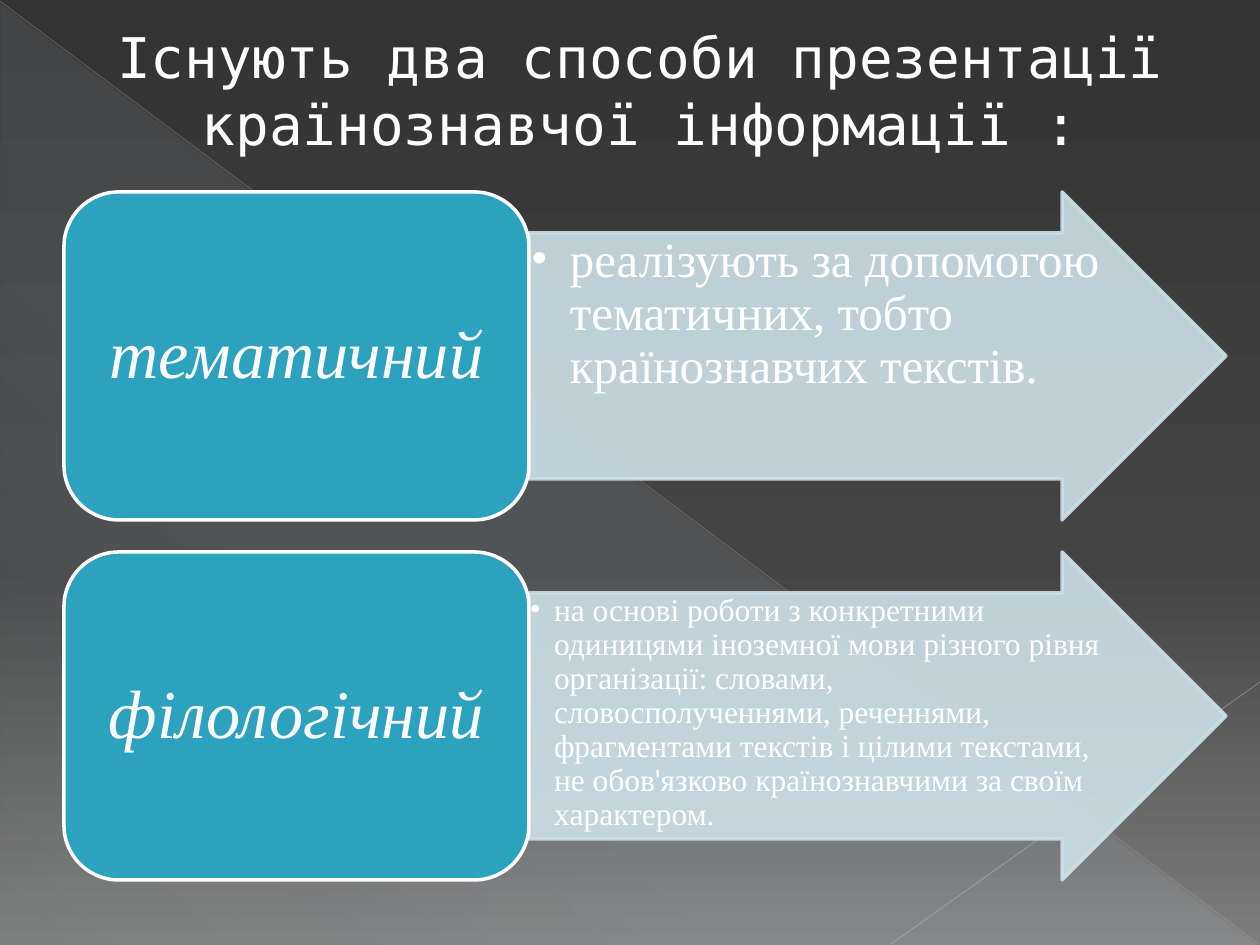
from dataclasses import dataclass

from lxml.etree import SubElement
from pptx import Presentation
from pptx.dml.color import RGBColor
from pptx.enum.shapes import MSO_CONNECTOR, MSO_SHAPE
from pptx.enum.text import MSO_ANCHOR as Anchor, MSO_AUTO_SIZE, PP_ALIGN as Align
from pptx.oxml.ns import qn
from pptx.util import Emu, Pt

PX_PER_INCH = 126
WHITE = RGBColor(0xFF, 0xFF, 0xFF)
TEAL = RGBColor(0x2D, 0xA2, 0xBF)
PALE_BLUE = RGBColor(0xCD, 0xE0, 0xE8)
ICE = RGBColor(0xDE, 0xF5, 0xFA)
GREY = RGBColor(0xB9, 0xB9, 0xB9)
LIGHT_GREY = RGBColor(0xC1, 0xC1, 0xC1)
DARK = RGBColor(0x33, 0x33, 0x33)
CHARCOAL = RGBColor(0x44, 0x44, 0x44)
MID_GREY = RGBColor(0x7D, 0x7D, 0x7D)

MONO = "DejaVu Sans Mono"
SERIF = "Times New Roman"

TITLE = "Існують два способи презентації країнознавчої інформації :"
ROW_TOP, ROW_PITCH, ROW_HEIGHT = 192, 360, 328
BOX_LEFT, BOX_WIDTH = 64, 465
ARROW_LEFT, ARROW_WIDTH = BOX_LEFT + BOX_WIDTH, 697
DETAIL_WIDTH = 575
SHAFT_INSET = ROW_HEIGHT // 8  # the shaft takes 3/4 of the arrow's height


@dataclass
class Method:
    name: str
    detail: str
    size: int
    indent: int
    inset: int


@dataclass
class Stop:
    position: int
    color: RGBColor
    opacity: int = 100


@dataclass
class Ray:
    start: tuple[int, int]
    end: tuple[int, int]
    color: RGBColor
    width: float
    opacity: int


METHODS = [
    Method("тематичний",
           "реалізують за допомогою тематичних, тобто країнознавчих текстів.",
           28, 39, 2),
    Method("філологічний",
           "на основі роботи з конкретними одиницями іноземної мови різного рівня "
           "організації: словами, словосполученнями, реченнями, фрагментами текстів "
           "і цілими текстами, не обов'язково країнознавчими за своїм xарактером.",
           18, 24, 1),
]
BACKDROP = [Stop(0, DARK), Stop(60, CHARCOAL), Stop(100, MID_GREY)]
SHEEN = [Stop(0, ICE, 10), Stop(70, ICE, 8), Stop(100, ICE, 1)]
RAYS = [
    Ray((0, 1), (1259, 944), GREY, 0.39, 35),
    Ray((1260, 682), (891, 944), LIGHT_GREY, 0.47, 45),
]


def px(n: int) -> Emu:
    return Emu(round(n * 914400 / PX_PER_INCH))


def set_gradient(owner, fill, stops: list[Stop], angle: int) -> None:
    """Fill with the stops along a clockwise angle; owner holds the fill's XML."""
    fill.gradient()
    fill.gradient_angle = 360 - angle
    stop_list = next(owner.element.iter(qn("a:gsLst")))
    for old in list(stop_list):
        stop_list.remove(old)
    for stop in stops:
        gs = SubElement(stop_list, qn("a:gs"), pos=str(stop.position * 1000))
        color = SubElement(gs, qn("a:srgbClr"), val=str(stop.color))
        if stop.opacity < 100:
            SubElement(color, qn("a:alpha"), val=str(stop.opacity * 1000))


def set_opacity(sp, percent: int) -> None:
    """Make both the fill and the line of a shape partly transparent."""
    for color in sp.element.spPr.iter(qn("a:srgbClr")):
        SubElement(color, qn("a:alpha"), val=str(percent * 1000))


def write(sp, text: str, *, font: str, size: int, italic: bool = False,
          align=Align.CENTER, anchor=Anchor.MIDDLE, spacing: float = 1,
          insets: tuple[int, int, int, int] = (13, 6, 13, 6)):
    """Put one paragraph in a shape; insets are left, top, right, bottom."""
    tf = sp.text_frame
    tf.word_wrap = True
    tf.vertical_anchor = anchor
    (tf.margin_left, tf.margin_top,
     tf.margin_right, tf.margin_bottom) = map(px, insets)
    p = tf.paragraphs[0]
    p.alignment = align
    p.line_spacing = spacing
    r = p.add_run()
    r.text = text
    r.font.name = font
    r.font.size = Pt(size)
    r.font.italic = italic
    r.font.color.rgb = WHITE
    return p


def add_bullet(p, indent: int) -> None:
    p.level = 1
    props = p._p.get_or_add_pPr()
    props.set("marL", str(px(indent)))
    props.set("indent", str(-px(indent)))
    SubElement(props, qn("a:buFont"), typeface=SERIF)
    SubElement(props, qn("a:buChar"), char="•")


def add_block(s, kind, left: int, top: int, width: int, height: int,
              fill: RGBColor, line: RGBColor):
    sp = s.shapes.add_shape(kind, px(left), px(top), px(width), px(height))
    sp.shadow.inherit = False
    sp.fill.solid()
    sp.fill.fore_color.rgb = fill
    sp.line.color.rgb = line
    sp.line.width = Pt(2)
    return sp


def add_ray(s, ray: Ray) -> None:
    line = s.shapes.add_connector(MSO_CONNECTOR.STRAIGHT,
                                  *map(px, ray.start + ray.end))
    line.line.color.rgb = ray.color
    line.line.width = Pt(ray.width)
    set_opacity(line, ray.opacity)
    SubElement(line.element.spPr, qn("a:effectLst"))


def add_backdrop(s) -> None:
    set_gradient(s, s.background.fill, BACKDROP, 90)
    sheen = s.shapes.add_shape(MSO_SHAPE.RIGHT_TRIANGLE,
                               px(1), px(3), px(1257), px(942))
    sheen.shadow.inherit = False
    sheen.line.fill.background()
    set_gradient(sheen, sheen.fill, SHEEN, 133)
    for ray in RAYS:
        add_ray(s, ray)


def add_title(s) -> None:
    title = s.shapes.title
    title.left, title.top, title.width, title.height = map(px, (95, 16, 1091, 149))
    write(title, TITLE, font=MONO, size=32, anchor=Anchor.TOP)
    title.text_frame.auto_size = MSO_AUTO_SIZE.SHAPE_TO_FIT_TEXT
    title.element.getparent().append(title.element)  # bring above the backdrop


def add_method(s, method: Method, top: int) -> None:
    arrow = add_block(s, MSO_SHAPE.RIGHT_ARROW, ARROW_LEFT, top, ARROW_WIDTH,
                      ROW_HEIGHT, PALE_BLUE, PALE_BLUE)
    arrow.adjustments[0] = 0.75
    set_opacity(arrow, 90)

    detail = s.shapes.add_textbox(px(ARROW_LEFT), px(top + SHAFT_INSET),
                                  px(DETAIL_WIDTH), px(ROW_HEIGHT - 2 * SHAFT_INSET))
    p = write(detail, method.detail, font=SERIF, size=method.size, align=Align.LEFT,
              anchor=Anchor.TOP, spacing=0.9, insets=(method.inset,) * 4)
    add_bullet(p, method.indent)

    box = add_block(s, MSO_SHAPE.ROUNDED_RECTANGLE, BOX_LEFT, top, BOX_WIDTH,
                    ROW_HEIGHT, TEAL, WHITE)
    write(box, method.name, font=SERIF, size=39, italic=True, spacing=0.9,
          insets=(20, 10, 20, 10))


def main() -> None:
    prs = Presentation()
    prs.slide_width, prs.slide_height = px(1260), px(945)
    s = prs.slides.add_slide(prs.slide_layouts[5])
    add_backdrop(s)
    add_title(s)
    for i, method in enumerate(METHODS):
        add_method(s, method, ROW_TOP + i * ROW_PITCH)
    prs.save("out.pptx")


if __name__ == "__main__":
    main()
